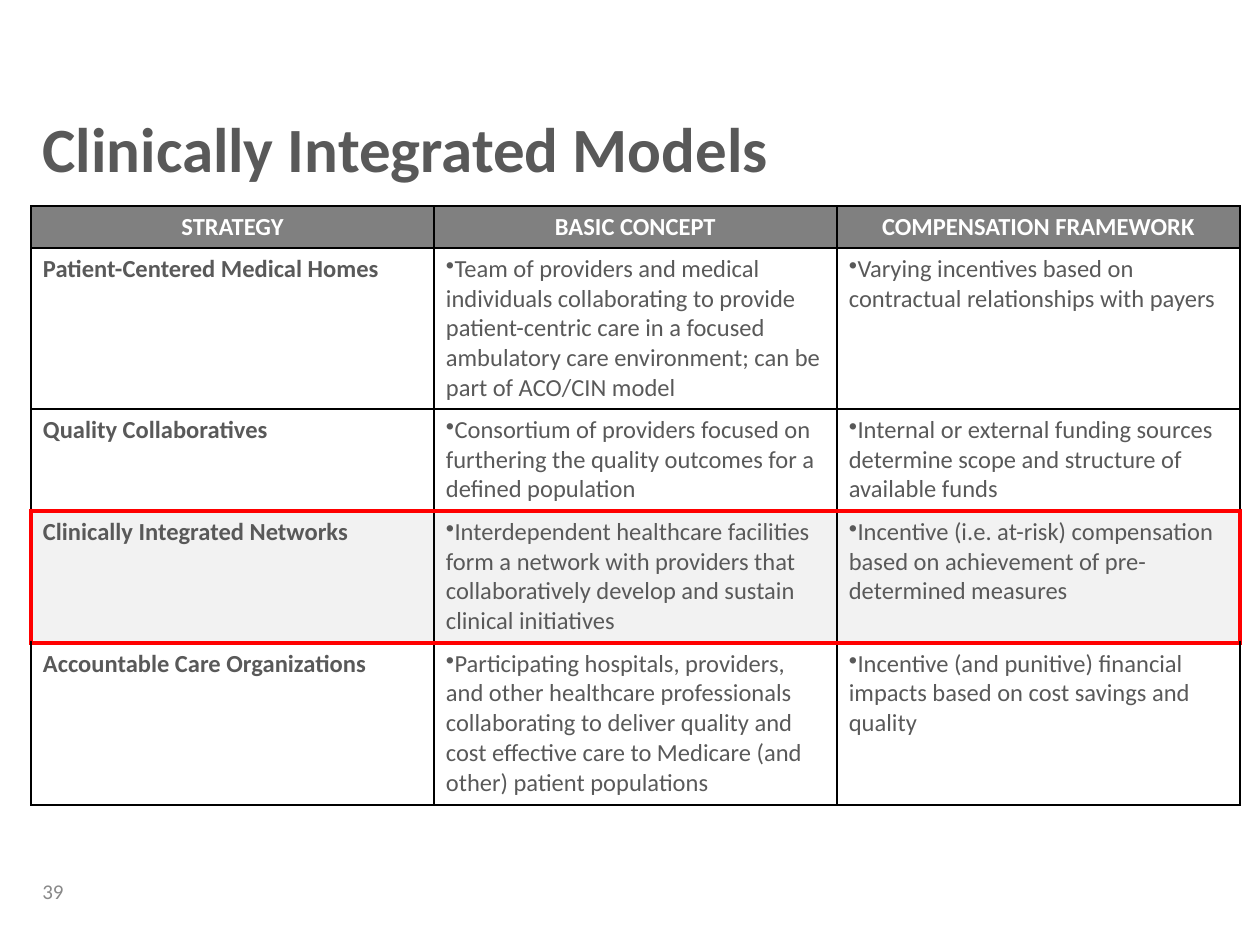
from lxml.etree import SubElement
from pptx import Presentation
from pptx.dml.color import RGBColor
from pptx.enum.text import MSO_ANCHOR, PP_ALIGN
from pptx.oxml.ns import qn
from pptx.util import Pt

SCALE = 914400 / 126
FONT = "Calibri"
INK = RGBColor(0x59, 0x59, 0x59)
PAGE_GRAY = RGBColor(0x89, 0x89, 0x89)
HEADER_GRAY = RGBColor(0x80, 0x80, 0x80)
HIGHLIGHT = RGBColor(0xF2, 0xF2, 0xF2)
WHITE = RGBColor(0xFF, 0xFF, 0xFF)
BLACK = RGBColor(0x00, 0x00, 0x00)
RED = RGBColor(0xFF, 0x00, 0x00)

HEADINGS = ("STRATEGY", "BASIC CONCEPT", "COMPENSATION FRAMEWORK")
MODELS = (
    ("Patient-Centered Medical Homes",
     "Team of providers and medical individuals collaborating to provide patient-centric care "
     "in a focused ambulatory care environment; can be part of ACO/CIN model",
     "Varying incentives based on contractual relationships with payers"),
    ("Quality Collaboratives",
     "Consortium of providers focused on furthering the quality outcomes for a defined population",
     "Internal or external funding sources determine scope and structure of available funds"),
    ("Clinically Integrated Networks",
     "Interdependent healthcare facilities form a network with providers that collaboratively "
     "develop and sustain clinical initiatives",
     "Incentive (i.e. at-risk) compensation based on achievement of pre-determined measures"),
    ("Accountable Care Organizations",
     "Participating hospitals, providers, and other healthcare professionals collaborating to "
     "deliver quality and cost effective care to Medicare (and other) patient populations",
     "Incentive (and punitive) financial impacts based on cost savings and quality"),
)
ROW_HEIGHTS = (42, 161, 102, 132, 162)
HIGHLIGHT_ROW = 3


def px(length):
    """Turn pixels into EMU."""
    return round(length * SCALE)


def write(frame, text, size=14, color=INK, bold=False, align=PP_ALIGN.LEFT, bullet=False):
    """Put one formatted paragraph into a text frame."""
    frame.word_wrap = True
    paragraph = frame.paragraphs[0]
    paragraph.text = text
    paragraph.alignment = align
    if bullet:
        properties = paragraph._p.get_or_add_pPr()
        properties.set("marL", "0")
        properties.set("indent", "0")
        SubElement(properties, qn("a:buChar"), char="•")
    font = paragraph.runs[0].font
    font.name, font.size, font.bold = FONT, Pt(size), bold
    font.color.rgb = color


def border_cell(cell, red_sides):
    """Draw a thin black border, with thick red on the sides named."""
    properties = cell._tc.get_or_add_tcPr()
    for side in "LRTB":
        color, width = (RED, 3) if side in red_sides else (BLACK, 1)
        line = SubElement(properties, qn(f"a:ln{side}"), w=str(Pt(width)))
        fill = SubElement(line, qn("a:solidFill"))
        SubElement(fill, qn("a:srgbClr"), val=str(color))


def red_sides_at(row, column):
    """Name the sides of a cell that lie on the highlight frame."""
    if row == HIGHLIGHT_ROW:
        return "TB" + {0: "L", len(HEADINGS) - 1: "R"}.get(column, "")
    return {HIGHLIGHT_ROW - 1: "B", HIGHLIGHT_ROW + 1: "T"}.get(row, "")


def add_title(slide, left, top, width, height):
    """Place the slide title."""
    title = slide.shapes.title
    title.left, title.top, title.width, title.height = map(px, (left, top, width, height))
    frame = title.text_frame
    frame.vertical_anchor = MSO_ANCHOR.TOP
    frame.margin_top = 0
    write(frame, "Clinically Integrated Models", size=36, bold=True)


def add_models_table(slide, left, top, width):
    """Build the comparison table with its highlighted row."""
    frame = slide.shapes.add_table(len(ROW_HEIGHTS), len(HEADINGS), px(left), px(top),
                                   px(width), px(sum(ROW_HEIGHTS)))
    table = frame.table
    table.first_row = table.horz_banding = False
    for column in table.columns:
        column.width = px(width // len(HEADINGS))
    for row, (height, texts) in enumerate(zip(ROW_HEIGHTS, (HEADINGS, *MODELS))):
        table.rows[row].height = px(height)
        for column, text in enumerate(texts):
            cell = table.cell(row, column)
            cell.margin_left = cell.margin_right = px(12)
            cell.margin_top = cell.margin_bottom = px(6)
            border_cell(cell, red_sides_at(row, column))
            if row in (0, HIGHLIGHT_ROW):
                cell.fill.solid()
                cell.fill.fore_color.rgb = HIGHLIGHT if row else HEADER_GRAY
            else:
                cell.fill.background()
            if row == 0:
                cell.vertical_anchor = MSO_ANCHOR.MIDDLE
                write(cell.text_frame, text, color=WHITE, bold=True, align=PP_ALIGN.CENTER)
            else:
                write(cell.text_frame, text, bold=column == 0, bullet=column > 0)


def add_page_number(slide, left, top, width, height):
    """Place the page number."""
    number = slide.shapes.add_textbox(*map(px, (left, top, width, height)))
    number.text_frame.vertical_anchor = MSO_ANCHOR.MIDDLE
    write(number.text_frame, "39", size=12, color=PAGE_GRAY)


def main():
    """Build and save the slide."""
    deck = Presentation()
    deck.slide_width, deck.slide_height = px(1260), px(945)
    slide = deck.slides.add_slide(deck.slide_layouts[5])
    add_title(slide, 30, 110, 1230, 137)
    add_page_number(slide, 30, 866, 249, 50)
    add_models_table(slide, 31, 206, 1209)
    deck.save("out.pptx")


if __name__ == "__main__":
    main()
